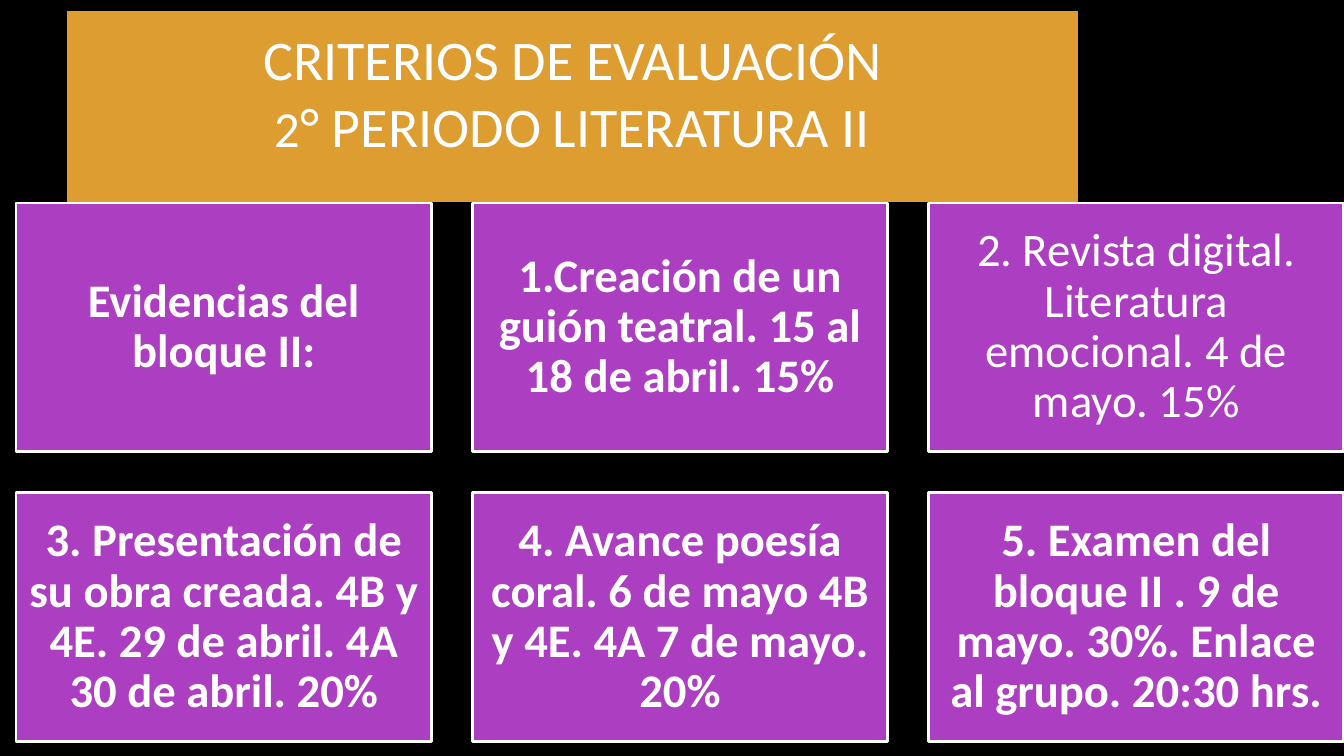
from dataclasses import dataclass

from pptx import Presentation
from pptx.dml.color import RGBColor
from pptx.enum.shapes import MSO_SHAPE
from pptx.enum.text import MSO_ANCHOR, MSO_AUTO_SIZE, PP_ALIGN
from pptx.util import Pt


@dataclass(frozen=True)
class Theme:
    font: str = "Calibri"
    background: RGBColor = RGBColor(0x00, 0x00, 0x00)
    banner: RGBColor = RGBColor(0xDD, 0x9D, 0x31)
    card: RGBColor = RGBColor(0xAC, 0x3E, 0xC1)
    text: RGBColor = RGBColor(0xFF, 0xFF, 0xFF)
    title_size: float = 30
    title_small_size: float = 27
    card_size: float = 25


THEME = Theme()

# Each title line is a list of (text, size) spans
TITLE_LINES = [
    [("CRITERIOS DE EVALUACIÓN", THEME.title_size)],
    [("2", THEME.title_small_size), ("° PERIODO", THEME.title_size),
     (" ", THEME.title_small_size), ("LITERATURA II", THEME.title_size)],
]

# Evidence cards, row by row: (text, bold)
CARDS = [
    ("Evidencias del bloque II:", True),
    ("1.Creación de un guión teatral. 15 al 18 de abril. 15%", True),
    ("2. Revista digital. Literatura emocional. 4 de mayo. 15%", False),
    ("3. Presentación de su obra creada. 4B y 4E. 29 de abril. 4A 30 de abril. 20%", True),
    ("4. Avance poesía coral. 6 de mayo 4B y 4E. 4A 7 de mayo. 20%", True),
    ("5. Examen del bloque II . 9 de mayo. 30%. Enlace al grupo. 20:30 hrs.", True),
]
COLUMNS = 3
GRID_LEFT, GRID_TOP = 8.6, 108.7
CARD_WIDTH, CARD_HEIGHT = 222.5, 133.2
COLUMN_STEP, ROW_STEP = 244.4, 155.3


def set_values(target, values):
    for name, value in values.items():
        setattr(target, name, value)


def set_fill(item, color):
    item.fill.solid()
    item.fill.fore_color.rgb = color


def format_frame(frame, anchor):
    margins = {f"margin_{side}": Pt(7.2) for side in ("left", "top", "right", "bottom")}
    set_values(frame, {"word_wrap": True, "auto_size": MSO_AUTO_SIZE.NONE,
                       "vertical_anchor": anchor, **margins})


def add_span(para, text, size, bold=False):
    span = para.add_run()
    span.text = text
    set_values(span.font, {"name": THEME.font, "size": Pt(size), "bold": bold})
    span.font.color.rgb = THEME.text


def fill_title(page):
    title = page.shapes.title
    set_values(title, {"left": Pt(36), "top": Pt(5.9),
                       "width": Pt(541.5), "height": Pt(102.3)})
    set_fill(title, THEME.banner)
    frame = title.text_frame
    format_frame(frame, MSO_ANCHOR.TOP)
    for index, spans in enumerate(TITLE_LINES):
        para = frame.add_paragraph() if index else frame.paragraphs[0]
        para.alignment = PP_ALIGN.CENTER
        for text, size in spans:
            add_span(para, text, size)


def add_card(page, left, top, text, bold):
    card = page.shapes.add_shape(MSO_SHAPE.RECTANGLE, Pt(left), Pt(top),
                                 Pt(CARD_WIDTH), Pt(CARD_HEIGHT))
    card.shadow.inherit = False
    set_fill(card, THEME.card)
    card.line.color.rgb = THEME.text
    card.line.width = Pt(1.5)
    format_frame(card.text_frame, MSO_ANCHOR.MIDDLE)
    para = card.text_frame.paragraphs[0]
    set_values(para, {"alignment": PP_ALIGN.CENTER, "line_spacing": 0.9})
    add_span(para, text, THEME.card_size, bold)


def main():
    deck = Presentation()
    set_values(deck, {"slide_width": Pt(720), "slide_height": Pt(405)})
    page = deck.slides.add_slide(deck.slide_layouts[5])
    set_fill(page.background, THEME.background)

    # Title banner
    fill_title(page)

    # Grid of evidence cards
    for index, (text, bold) in enumerate(CARDS):
        row, column = divmod(index, COLUMNS)
        add_card(page, GRID_LEFT + column * COLUMN_STEP,
                 GRID_TOP + row * ROW_STEP, text, bold)

    deck.save("out.pptx")


if __name__ == "__main__":
    main()
